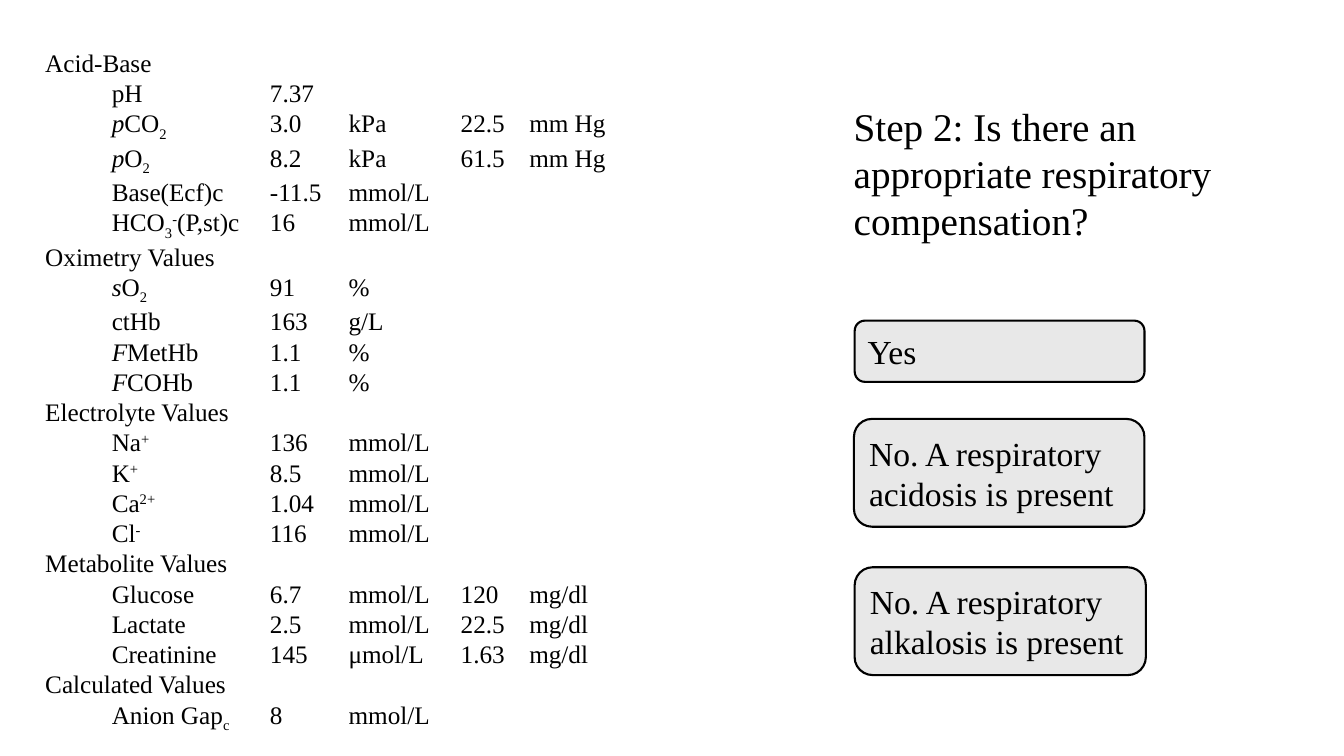
import dataclasses

import lxml.etree
import pptx
import pptx.dml.color
import pptx.enum.shapes
import pptx.enum.text
import pptx.oxml.ns
import pptx.util

Pt = pptx.util.Pt
FONT = "Times New Roman"
BLACK = "000000"
ANSWER_FILL = "E8E8E8"
TAB_STOPS = (16.5, 47.5, 160.5, 216.75, 296.75, 345.75)
# Markers that switch a style on and off inside a line of markup.
STYLES = {"*": ("i", "1"), "~": ("baseline", "-25000"), "^": ("baseline", "30000")}


@dataclasses.dataclass(frozen=True)
class Area:
    left: float
    top: float
    width: float
    height: float

    def lengths(self) -> list:
        return [Pt(value) for value in dataclasses.astuple(self)]


@dataclasses.dataclass(frozen=True)
class Section:
    heading: str
    readings: tuple[str, ...]


@dataclasses.dataclass(frozen=True)
class Answer:
    text: str
    area: Area


QUESTION = "Step 2: Is there an appropriate respiratory compensation?"

ANSWERS = (
    Answer("Yes", Area(610.5, 229, 207, 43.75)),
    Answer("No. A respiratory acidosis is present", Area(610, 299.25, 207.5, 77)),
    Answer("No. A respiratory alkalosis is present", Area(610.5, 405.25, 208, 77)),
)

# "|" stands for a tab, "*" for italic, "~" for subscript, "^" for superscript.
SECTIONS = (
    Section("Acid-Base", (
        "pH|7.37",
        "*p*CO~2~|3.0|kPa|22.5|mm Hg",
        "*p*O~2|~8.2|kPa|61.5|mm Hg",
        "Base(Ecf)c|-11.5|mmol/L",
        "HCO~3~^-^(P,st)c|16|mmol/L",
    )),
    Section("Oximetry Values", (
        "*s*O~2|~91|%",
        "ctHb|163|g/L",
        "*F*MetHb|1.1|%",
        "*F*COHb|1.1|%",
    )),
    Section("Electrolyte Values", (
        "Na^+^|136|mmol/L",
        "K^+^|8.5|mmol/L",
        "Ca^2+|^1.04|mmol/L",
        "Cl^-^|116|mmol/L",
    )),
    Section("Metabolite Values", (
        "Glucose|6.7|mmol/L|120|mg/dl",
        "Lactate|2.5|mmol/L|22.5|mg/dl",
        "Creatinine|145|μmol/L|1.63|mg/dl",
    )),
    Section("Calculated Values", ("Anion Gap~c|~8|mmol/L",)),
)


def color(value: str) -> pptx.dml.color.RGBColor:
    return pptx.dml.color.RGBColor.from_string(value)


def set_font(para, size: float) -> None:
    para.font.name = FONT
    para.font.size = Pt(size)
    para.font.color.rgb = color(BLACK)


def add_tab_stops(para) -> None:
    qualified = pptx.oxml.ns.qn
    properties = para._p.get_or_add_pPr()
    tab_list = lxml.etree.SubElement(properties, qualified("a:tabLst"))
    for stop in TAB_STOPS:
        lxml.etree.SubElement(tab_list, qualified("a:tab"), pos=str(Pt(stop)), algn="l")


def add_spans(para, markup: str) -> None:
    """Turn one line of markup into runs."""
    active, text = "", ""

    def flush() -> None:
        if text:
            span = para.add_run()
            span.text = text.replace("|", "\t")
            if active:
                span._r.get_or_add_rPr().set(*STYLES[active])

    for character in markup:
        if character in STYLES:
            flush()
            active, text = ("" if active else character), ""
        else:
            text += character
    flush()


def add_text_box(page, area: Area):
    frame = page.shapes.add_textbox(*area.lengths()).text_frame
    frame.word_wrap = True
    return frame


def add_question(page) -> None:
    para = add_text_box(page, Area(602.75, 69.75, 304.5, 108.75)).paragraphs[0]
    para.text = QUESTION
    set_font(para, 28)


def add_answer(page, answer: Answer) -> None:
    kind = pptx.enum.shapes.MSO_SHAPE.ROUNDED_RECTANGLE
    box = page.shapes.add_shape(kind, *answer.area.lengths())
    box.shadow.inherit = False
    box.fill.solid()
    box.fill.fore_color.rgb = color(ANSWER_FILL)
    box.line.color.rgb = color(BLACK)
    box.line.width = Pt(1.5)
    frame = box.text_frame
    frame.word_wrap = True
    frame.vertical_anchor = pptx.enum.text.MSO_ANCHOR.MIDDLE
    para = frame.paragraphs[0]
    para.text = answer.text
    para.alignment = pptx.enum.text.PP_ALIGN.LEFT
    set_font(para, 24)


def add_blood_gas_report(page) -> None:
    frame = add_text_box(page, Area(25.25, 30.25, 448.5, 487.5))
    lines = []
    for section in SECTIONS:
        lines.append(section.heading)
        lines.extend("||" + reading for reading in section.readings)
    for index, line in enumerate(lines):
        para = frame.add_paragraph() if index else frame.paragraphs[0]
        add_tab_stops(para)
        set_font(para, 18)
        add_spans(para, line)


def main() -> None:
    deck = pptx.Presentation()
    deck.slide_width, deck.slide_height = Pt(960), Pt(540)
    page = deck.slides.add_slide(deck.slide_layouts[6])
    add_question(page)
    for answer in ANSWERS:
        add_answer(page, answer)
    add_blood_gas_report(page)
    deck.save("out.pptx")


if __name__ == "__main__":
    main()
